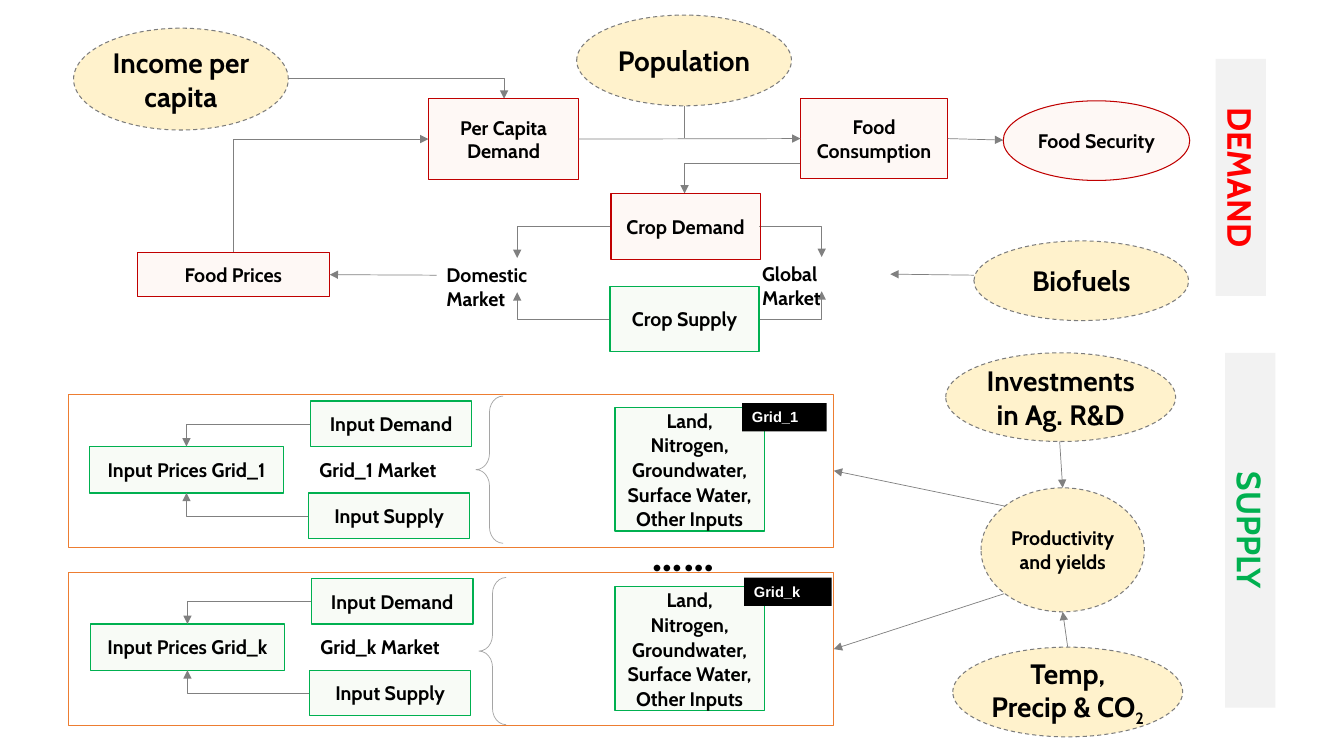
from dataclasses import dataclass, replace
from lxml.etree import SubElement
from pptx import Presentation
from pptx.dml.color import RGBColor
from pptx.enum.dml import MSO_LINE
from pptx.enum.shapes import MSO_CONNECTOR, MSO_SHAPE
from pptx.enum.text import MSO_ANCHOR, PP_ALIGN
from pptx.oxml.ns import qn
from pptx.util import Inches, Pt


@dataclass(frozen=True)
class Look:
    fill: str = ""
    alpha: int = 100
    line: str = ""
    width: float = 0.75
    dash: bool = False
    ink: str = "000000"
    size: float = 14
    font: str = "Cabin"
    mid: bool = True
    space: float = 1.0


class Theme:
    arrow = "808080"
    thin = 0.5
    red = Look("FBE5D6", 23, "C00000")
    green = Look("E2F0D9", 23, "00B050", 1)
    inputs = replace(green, space=1.05)
    small = Look("FFF2CC", line="7C7C7C", dash=True)
    driver = replace(small, size=20)
    demand = Look("F2F2F2", ink="FF0000", size=24, mid=False)
    supply = replace(demand, ink="00B050")
    tag = Look("000000", ink="FFFFFF", size=10.5, font="Arial", mid=False)
    label = Look(mid=False)
    dots = Look(size=32, font="Calibri", mid=False)
    frame = Look(line="ED7D31")
    brace = Look(line="A5A5A5", width=0.5)


RECT, OVAL, BRACE = MSO_SHAPE.RECTANGLE, MSO_SHAPE.OVAL, MSO_SHAPE.LEFT_BRACE

deck = Presentation()
deck.slide_width, deck.slide_height = Inches(13.33), Inches(7.5)
slide = deck.slides.add_slide(deck.slide_layouts[6])


def block(kind, box, look, text="", left=False):
    place = [Inches(n) for n in box]
    if kind is None:
        shape = slide.shapes.add_textbox(*place)
    else:
        shape = slide.shapes.add_shape(kind, *place)
        shape.shadow.inherit = False
        if look.fill:
            shape.fill.solid()
            shape.fill.fore_color.rgb = RGBColor.from_string(look.fill)
            if look.alpha < 100:
                tint = shape.element.spPr.find(".//" + qn("a:srgbClr"))
                SubElement(tint, qn("a:alpha"), val=str(look.alpha * 1000))
        else:
            shape.fill.background()
        if look.line:
            shape.line.color.rgb = RGBColor.from_string(look.line)
            shape.line.width = Pt(look.width)
            if look.dash:
                shape.line.dash_style = MSO_LINE.DASH
        else:
            shape.line.fill.background()
    if not text:
        return shape
    frame = shape.text_frame
    frame.word_wrap = True
    frame.vertical_anchor = MSO_ANCHOR.MIDDLE if look.mid else MSO_ANCHOR.TOP
    if look.mid:
        frame.margin_left = frame.margin_right = Inches(0.03)
        frame.margin_top = frame.margin_bottom = Inches(0.03)
    for num, words in enumerate(text.split("\n")):
        para = frame.add_paragraph() if num else frame.paragraphs[0]
        para.alignment = PP_ALIGN.LEFT if left else PP_ALIGN.CENTER
        para.line_spacing = look.space
        run = para.add_run()
        run.text = words
        run.font.name, run.font.size, run.font.bold = look.font, Pt(look.size), True
        run.font.color.rgb = RGBColor.from_string(look.ink)
    return shape


def link(start, stop, bent=False, tip="tailEnd", begin=None, end=None):
    kind = MSO_CONNECTOR.ELBOW if bent else MSO_CONNECTOR.STRAIGHT
    line = slide.shapes.add_connector(kind, *[Inches(n) for n in start + stop])
    if begin:
        line.begin_connect(*begin)
    if end:
        line.end_connect(*end)
    props = line.element.spPr
    if bent:
        props.find(qn("a:prstGeom")).set("prst", "bentConnector2")
    line.line.color.rgb = RGBColor.from_string(Theme.arrow)
    line.line.width = Pt(Theme.thin)
    if tip:
        SubElement(props.find(qn("a:ln")), qn("a:" + tip), type="triangle")
    SubElement(props, qn("a:effectLst"))


link((6.05, 3.17), (5.13, 2.9), True)
link((7.53, 3.17), (8.15, 2.89), True)
link((6.06, 2.25), (5.13, 2.56), True)
link((7.53, 2.25), (8.15, 2.55), True)
link((7.94, 1.62), (6.79, 1.92), True)
link((4.25, 1.38), (2.32, 2.51), True, "headEnd")
link((2.86, 0.78), (5, 0.98), True)

block(OVAL, (0.73, 0.28, 2.13, 1.01), Theme.driver, "Income per capita")
block(OVAL, (5.72, 0.15, 2.13, 0.9), Theme.driver, "Population")
block(OVAL, (9.66, 2.39, 2.13, 0.79), Theme.driver, "Biofuels")
invest = block(OVAL, (9.38, 3.5, 2.28, 0.88), Theme.driver, "Investments in Ag. R&D")
yields = block(OVAL, (9.73, 4.84, 1.62, 1.23), Theme.small, "Productivity and yields")
climate = block(OVAL, (9.45, 6.42, 2.28, 0.89), Theme.driver, "Temp, Precip & CO")
sub = climate.text_frame.paragraphs[0].add_run()
sub.text = "2"
sub.font.name, sub.font.size, sub.font.bold = Theme.driver.font, Pt(Theme.driver.size), True
sub.font.color.rgb = RGBColor.from_string(Theme.driver.ink)
sub.font._element.set("baseline", "-25000")

capita = block(RECT, (4.25, 0.98, 1.49, 0.8), Theme.red, "Per Capita\nDemand")
food = block(RECT, (7.94, 0.98, 1.46, 0.79), Theme.red, "Food Consumption")
prices = block(RECT, (1.36, 2.51, 1.91, 0.43), Theme.red, "Food Prices")
block(RECT, (6.06, 1.92, 1.48, 0.65), Theme.red, "Crop Demand")
block(RECT, (6.05, 2.84, 1.48, 0.65), Theme.green, "Crop Supply")
block(OVAL, (9.95, 1, 1.85, 0.79), Theme.red, "Food Security")

for text, box in (
    ("Domestic Market", (4.33, 2.56, 1.6, 0.34)),
    ("Global Market", (7.46, 2.55, 1.37, 0.34)),
):
    market = block(None, box, Theme.label, text, left=True)
    market.text_frame.margin_right = Inches(0.5)

for text, box, look in (
    ("DEMAND", (11.13, 1.51, 2.35, 0.5), Theme.demand),
    ("SUPPLY", (10.64, 5.01, 3.52, 0.5), Theme.supply),
):
    block(RECT, box, look, text).rotation = 90

link((6.79, 1.05), (6.79, 1.37), tip="")
link((5.74, 1.38), (7.94, 1.38), begin=(capita, 3), end=(food, 1))
link((9.4, 1.38), (9.95, 1.39), begin=(food, 3))
link((9.66, 2.73), (8.83, 2.72))
link((4.33, 2.73), (3.27, 2.72), end=(prices, 3))
link((10.51, 4.38), (10.54, 4.84))
link((10.59, 6.42), (10.54, 6.07))

stock = "Land,\nNitrogen,\nGroundwater,\nSurface Water,\nOther Inputs"
for name, x, y, land, tag, brace, top, out in (
    ("Grid_1", 0.89, 3.98, 4.04, (7.36, 4, 0.84, 0.28), (4.72, 3.93), 3.91, 5.02),
    ("Grid_k", 0.9, 5.74, 5.82, (7.38, 5.73, 0.87, 0.28), (4.75, 5.73), 5.68, 5.89),
):
    frame = block(RECT, (0.68, top, 7.59, 1.52), Theme.frame)
    block(RECT, (6.1, land, 1.48, 1.23), Theme.inputs, stock)
    block(RECT, tag, Theme.tag, name, left=True)
    block(RECT, (x, y + 0.45, 1.92, 0.46), Theme.green, "Input Prices " + name)
    block(RECT, (x + 2.19, y, 1.6, 0.45), Theme.green, "Input Demand")
    block(RECT, (x + 2.17, y + 0.91, 1.6, 0.45), Theme.green, "Input Supply")
    label = block(None, (x + 2.18, y + 0.51, 1.39, 0.34), Theme.label, name + " Market", left=True)
    label.text_frame.word_wrap = False
    curl = block(BRACE, brace + (0.27, 1.46), Theme.brace)
    curl.adjustments[0], curl.adjustments[1] = 0.59, 0.5
    link((x + 2.19, y + 0.23), (x + 0.96, y + 0.45), True)
    link((x + 2.17, y + 1.14), (x + 0.96, y + 0.91), True)
    link((9.96, out), (8.27, top + 0.76), end=(frame, 3))

block(None, (6.36, 5.18, 0.9, 0.64), Theme.dots, "……", left=True)

deck.save("out.pptx")
